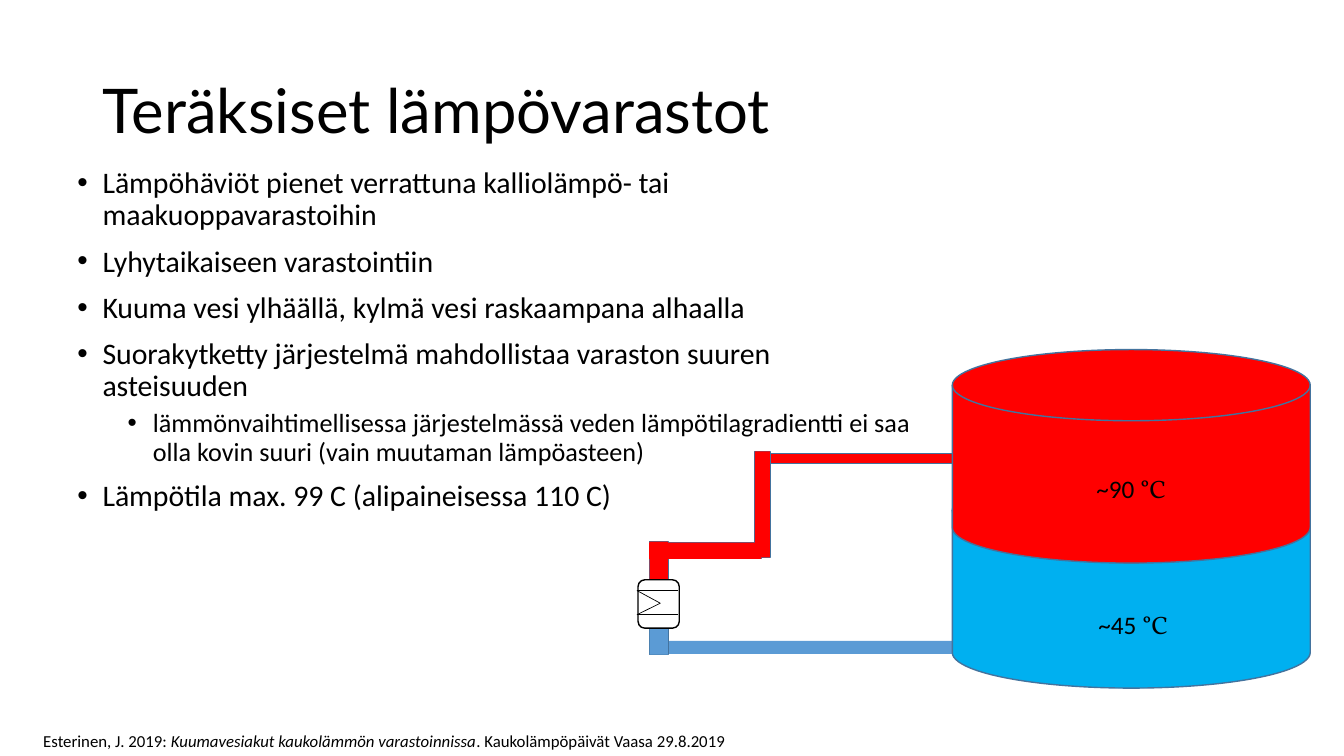
from dataclasses import dataclass

from lxml.etree import SubElement
from pptx import Presentation
from pptx.dml.color import RGBColor
from pptx.enum.shapes import MSO_CONNECTOR, MSO_SHAPE
from pptx.enum.text import MSO_ANCHOR, MSO_AUTO_SIZE
from pptx.oxml.ns import qn
from pptx.util import Cm, Pt

COLORS = {
    "black": "000000",
    "white": "FFFFFF",
    "outline": "43739E",
    "hot": "FF0000",
    "cold_pipe": "5B9BD5",
    "cold_tank": "00B0F0",
}


@dataclass(frozen=True)
class Box:
    left: float
    top: float
    width: float
    height: float

    def lengths(self) -> tuple:
        return Cm(self.left), Cm(self.top), Cm(self.width), Cm(self.height)


@dataclass(frozen=True)
class Pipe:
    box: Box
    color: str
    rotation: int = 0
    outlined: bool = True
    covered: bool = False


@dataclass(frozen=True)
class Tank:
    box: Box
    color: str
    label: str
    label_box: Box


@dataclass(frozen=True)
class Bullet:
    text: str
    level: int = 0


@dataclass(frozen=True)
class Stroke:
    start: tuple[float, float]
    end: tuple[float, float]


BULLETS = [
    Bullet("Lämpöhäviöt pienet verrattuna kalliolämpö- tai maakuoppavarastoihin"),
    Bullet("Lyhytaikaiseen varastointiin"),
    Bullet("Kuuma vesi ylhäällä, kylmä vesi raskaampana alhaalla"),
    Bullet("Suorakytketty järjestelmä mahdollistaa varaston suuren asteisuuden"),
    Bullet(
        "lämmönvaihtimellisessa järjestelmässä veden lämpötilagradientti ei saa "
        "olla kovin suuri (vain muutaman lämpöasteen)",
        level=1,
    ),
    Bullet("Lämpötila max. 99 C (alipaineisessa 110 C)"),
]

PIPES = [
    Pipe(Box(16.36, 16.15, 11.76, 0.33), "cold_pipe", outlined=False),
    Pipe(Box(15.75, 15.42, 1.7, 0.46), "cold_pipe", 90, covered=True),
    Pipe(Box(15.75, 14.27, 1.7, 0.46), "hot", 90, covered=True),
    Pipe(Box(19.18, 11.43, 8.94, 0.25), "hot"),
    Pipe(Box(16.36, 13.67, 2.82, 0.41), "hot", 180, covered=True),
    Pipe(Box(17.88, 12.52, 2.67, 0.38), "hot", 270, covered=True),
]

TANKS = [
    Tank(Box(24, 11.96, 9.02, 5.38), "cold_tank", "~45 ", Box(27.43, 15.24, 2.41, 1.07)),
    Tank(Box(24, 8.81, 9.02, 5.38), "hot", "~90 ", Box(27.38, 11.81, 2.41, 1.07)),
]

PUMP = Box(16.08, 14.61, 1.04, 1.22)
PUMP_STROKES = [
    Stroke((17.09, 14.88), (16.05, 14.88)),
    Stroke((16.64, 15.2), (16.05, 14.88)),
    Stroke((16.64, 15.2), (16.05, 15.49)),
    Stroke((17.09, 15.49), (16.05, 15.49)),
]


def color(name: str) -> RGBColor:
    return RGBColor.from_string(COLORS[name])


def format_font(font, size: float, name: str = "Calibri") -> None:
    font.name = name
    font.size = Pt(size)
    font.color.rgb = color("black")


def add_text_box(slide, box: Box):
    text_frame = slide.shapes.add_textbox(*box.lengths()).text_frame
    text_frame.word_wrap = True
    return text_frame


def add_runs(paragraph, texts: list[str], size: float) -> list:
    runs = []
    for text in texts:
        run = paragraph.add_run()
        run.text = text
        format_font(run.font, size)
        runs.append(run)
    return runs


def add_filled(slide, kind, box: Box, fill: str, outline: str | None):
    shape = slide.shapes.add_shape(kind, *box.lengths())
    shape.shadow.inherit = False
    shape.fill.solid()
    shape.fill.fore_color.rgb = color(fill)
    if outline:
        shape.line.color.rgb = color(outline)
        shape.line.width = Pt(1)
    else:
        shape.line.fill.background()
    return shape


def add_title(slide) -> None:
    title = slide.shapes.title
    title.left, title.top, title.width, title.height = Box(2.34, 1.02, 29.21, 3.68).lengths()
    text_frame = title.text_frame
    text_frame.text = "Teräksiset lämpövarastot"
    text_frame.vertical_anchor = MSO_ANCHOR.MIDDLE
    text_frame.word_wrap = True
    paragraph = text_frame.paragraphs[0]
    paragraph.line_spacing = 0.9
    properties = paragraph._p.get_or_add_pPr()
    properties.set("algn", "l")
    format_font(paragraph.runs[0].font, 44, "Lato")


def add_bullets(slide) -> None:
    text_frame = add_text_box(slide, Box(1.7, 4.11, 21.59, 13.21))
    for index, bullet in enumerate(BULLETS):
        paragraph = text_frame.add_paragraph() if index else text_frame.paragraphs[0]
        paragraph.text = bullet.text
        paragraph.level = bullet.level
        paragraph.line_spacing = 0.9
        if index:
            paragraph.space_before = Pt(5 if bullet.level else 10)
        properties = paragraph._p.get_or_add_pPr()
        properties.set("marL", str(Cm(0.635 + 1.27 * bullet.level)))
        properties.set("indent", str(-Cm(0.635)))
        SubElement(properties, qn("a:buFont"), typeface="Arial")
        SubElement(properties, qn("a:buChar"), char="•")
        format_font(paragraph.runs[0].font, 18.7 if bullet.level else 21.3)


def add_citation(slide) -> None:
    text_frame = add_text_box(slide, Box(0.84, 18.29, 18.11, 0.76))
    text_frame.auto_size = MSO_AUTO_SIZE.SHAPE_TO_FIT_TEXT
    texts = [
        "Esterinen, J. 2019: ",
        "Kuumavesiakut kaukolämmön varastoinnissa",
        ". Kaukolämpöpäivät Vaasa 29.8.2019",
    ]
    runs = add_runs(text_frame.paragraphs[0], texts, 12)
    runs[1].font.italic = True


def add_pipe(slide, pipe: Pipe, outlined: bool) -> None:
    outline = "outline" if outlined else None
    shape = add_filled(slide, MSO_SHAPE.RECTANGLE, pipe.box, pipe.color, outline)
    shape.rotation = pipe.rotation


def add_tank(slide, tank: Tank) -> None:
    add_filled(slide, MSO_SHAPE.FLOWCHART_MAGNETIC_DISK, tank.box, tank.color, "outline")


def add_tank_label(slide, tank: Tank) -> None:
    text_frame = add_text_box(slide, tank.label_box)
    text_frame.auto_size = MSO_AUTO_SIZE.SHAPE_TO_FIT_TEXT
    runs = add_runs(text_frame.paragraphs[0], [tank.label, "°C"], 18)
    runs[1].font.name = "Vollkorn"


def add_stroke(slide, stroke: Stroke) -> None:
    ends = [Cm(value) for value in stroke.start + stroke.end]
    connector = slide.shapes.add_connector(MSO_CONNECTOR.STRAIGHT, *ends)
    connector.line.color.rgb = color("black")
    connector.line.width = Pt(0.5)
    SubElement(connector._element.spPr, qn("a:effectLst"))


def main() -> None:
    presentation = Presentation()
    presentation.slide_width, presentation.slide_height = Cm(33.87), Cm(19.05)
    slide = presentation.slides.add_slide(presentation.slide_layouts[5])
    add_title(slide)
    add_bullets(slide)
    add_citation(slide)
    for pipe in PIPES:
        add_pipe(slide, pipe, pipe.outlined)
    for pipe in filter(lambda pipe: pipe.covered, PIPES):
        add_pipe(slide, pipe, False)
    for tank in TANKS:
        add_tank(slide, tank)
        add_tank_label(slide, tank)
    add_filled(slide, MSO_SHAPE.ROUNDED_RECTANGLE, PUMP, "white", "black")
    for stroke in PUMP_STROKES:
        add_stroke(slide, stroke)
    presentation.save("out.pptx")


if __name__ == "__main__":
    main()
